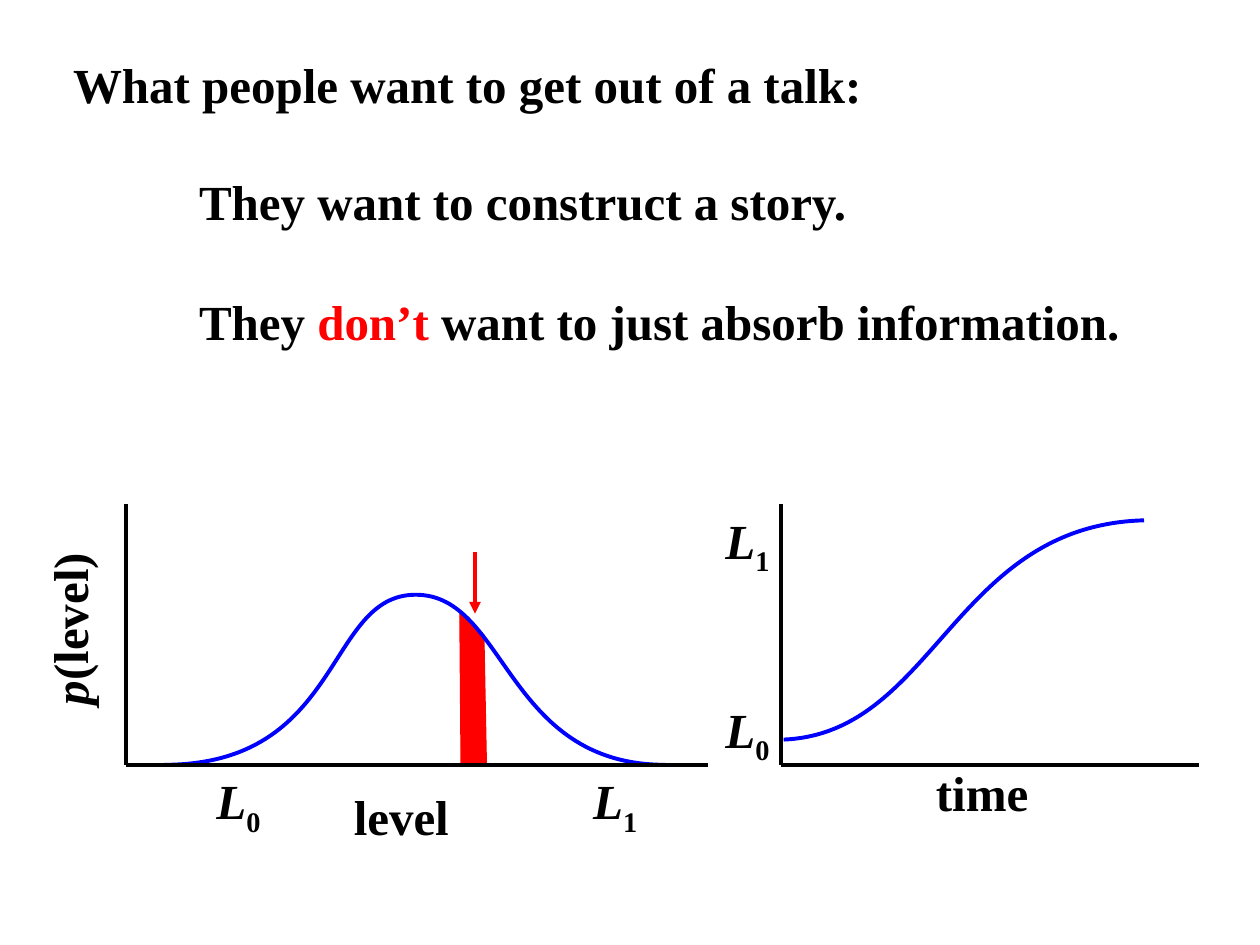
from lxml import etree
from pptx import Presentation
from pptx.dml.color import RGBColor
from pptx.enum.shapes import MSO_CONNECTOR
from pptx.enum.text import MSO_ANCHOR, MSO_AUTO_SIZE, PP_ALIGN
from pptx.oxml.ns import qn
from pptx.util import Pt

PX = 9144  # EMU per px, 100 px to the inch
FONT = "Times New Roman"
SIZE = Pt(28)
BLACK = RGBColor(0, 0, 0)
RED = RGBColor(255, 0, 0)
BLUE = RGBColor(0, 0, 255)
STRAIGHT = MSO_CONNECTOR.STRAIGHT
TOP = MSO_ANCHOR.TOP
LEFT = PP_ALIGN.LEFT
NO_FIT = MSO_AUTO_SIZE.NONE


def place(sp, x, y, w, h):
    sp.left, sp.top, sp.width, sp.height = (v * PX for v in (x, y, w, h))


def add_run(p, text, color=BLACK, italic=False):
    r = p.add_run()
    r.text = text
    f = r.font
    f.name, f.size, f.bold, f.italic = FONT, SIZE, True, italic
    f.color.rgb = color
    return r


def add_label(s, x, y, w, italic="", plain="", subscript="", rotation=0):
    sp = s.shapes.add_textbox(x * PX, y * PX, w * PX, 57 * PX)
    sp.rotation = rotation
    tf = sp.text_frame
    tf.word_wrap = False
    p = tf.paragraphs[0]
    if italic:
        add_run(p, italic, italic=True)
    if plain:
        add_run(p, plain)
    if subscript:
        r = add_run(p, subscript)
        r.font._element.set("baseline", "-25000")


def add_line(s, x1, y1, x2, y2, color=BLACK, arrow=False):
    c = s.shapes.add_connector(STRAIGHT, x1 * PX, y1 * PX, x2 * PX, y2 * PX)
    c.line.color.rgb = color
    c.line.width = Pt(2.25)
    if arrow:
        etree.SubElement(c.line._get_or_add_ln(), qn("a:tailEnd"), type="triangle")
    etree.SubElement(c._element.spPr, qn("a:effectLst"))


def add_outline(s, x, y, points, color, width, closed=False):
    (x0, y0), *rest = [(x + dx, y + dy) for dx, dy in points]
    fb = s.shapes.build_freeform(x0, y0, scale=PX)
    fb.add_line_segments(rest, close=closed)
    sp = fb.convert_to_shape()
    sp.shadow.inherit = False
    sp.line.color.rgb = color
    sp.line.width = Pt(width)
    return sp


def add_curve(s, x, y, points):
    """Draw a Bezier curve: a start point, then two controls and an end per piece."""
    sp = add_outline(s, x, y, points, BLUE, 2.25)
    sp.fill.background()
    segments = list(sp._element.iter(qn("a:lnTo")))
    for i in range(0, len(segments), 3):
        bezier = etree.Element(qn("a:cubicBezTo"))
        segments[i].addprevious(bezier)
        for segment in segments[i:i + 3]:
            bezier.append(segment[0])
            segment.getparent().remove(segment)


def add_axes(s, x, y, w, h):
    add_line(s, x, y, x, y + h)
    add_line(s, x, y + h, x + w, y + h)


def format_frame(tf):
    tf.auto_size = NO_FIT
    tf.vertical_anchor = TOP
    tf.word_wrap = True


def add_message(s, x, y, w):
    title, body = s.placeholders
    place(title, x, y, w, 57)
    format_frame(title.text_frame)
    p = title.text_frame.paragraphs[0]
    p.alignment = LEFT
    add_run(p, "What people want to get out of a talk:")

    place(body, x + 100, y + 93, w - 100, 153)
    tf = body.text_frame
    format_frame(tf)
    points = [
        [("They want to construct a story.", BLACK)],
        [("They ", BLACK), ("don’t", RED),
         (" want to just absorb information.", BLACK)],
    ]
    for i, runs in enumerate(points):
        p = tf.add_paragraph() if i else tf.paragraphs[0]
        p.space_before = Pt(35 * i)
        pPr = p._p.get_or_add_pPr()
        pPr.set("marL", "0")
        pPr.set("indent", "0")
        etree.SubElement(pPr, qn("a:buNone"))
        for text, color in runs:
            add_run(p, text, color)


def add_distribution(s, x, y, w, h):
    band = [(265, 86), (266, h), (286, h), (284, 104)]
    sp = add_outline(s, x, y, band, RED, 0.75, closed=True)
    sp.fill.solid()
    sp.fill.fore_color.rgb = RED
    add_line(s, x + 277, y + 38, x + 277, y + 87, RED, arrow=True)
    add_curve(s, x, y, [(428, h), (301, h), (302, 72), (230, 72),
                        (158, 72), (173, h), (30, h)])
    add_axes(s, x, y, w, h)
    add_label(s, x - 116, y + 70, 142, "p", "(level)", rotation=270)
    add_label(s, x + 171, y + h + 12, 96, plain="level")
    add_label(s, x + 62, y + h, 57, "L", subscript="0")
    add_label(s, x + 361, y + h, 57, "L", subscript="1")


def add_time_course(s, x, y, w, h):
    add_axes(s, x, y, w, h)
    add_label(s, x - 54, y + 150, 57, "L", subscript="0")
    add_label(s, x - 54, y, 57, "L", subscript="1")
    add_curve(s, x, y, [(2, 187), (122, 182), (137, 17), (288, 13)])
    add_label(s, x + 113, y + h - 7, 94, plain="time")


def main():
    prs = Presentation()
    prs.slide_width, prs.slide_height = 1000 * PX, 750 * PX
    s = prs.slides.add_slide(prs.slide_layouts[1])
    add_message(s, 48, 38, 942)
    add_distribution(s, 100, 400, 462, 207)
    add_time_course(s, 620, 400, 332, 207)
    prs.save("out.pptx")


if __name__ == "__main__":
    main()
